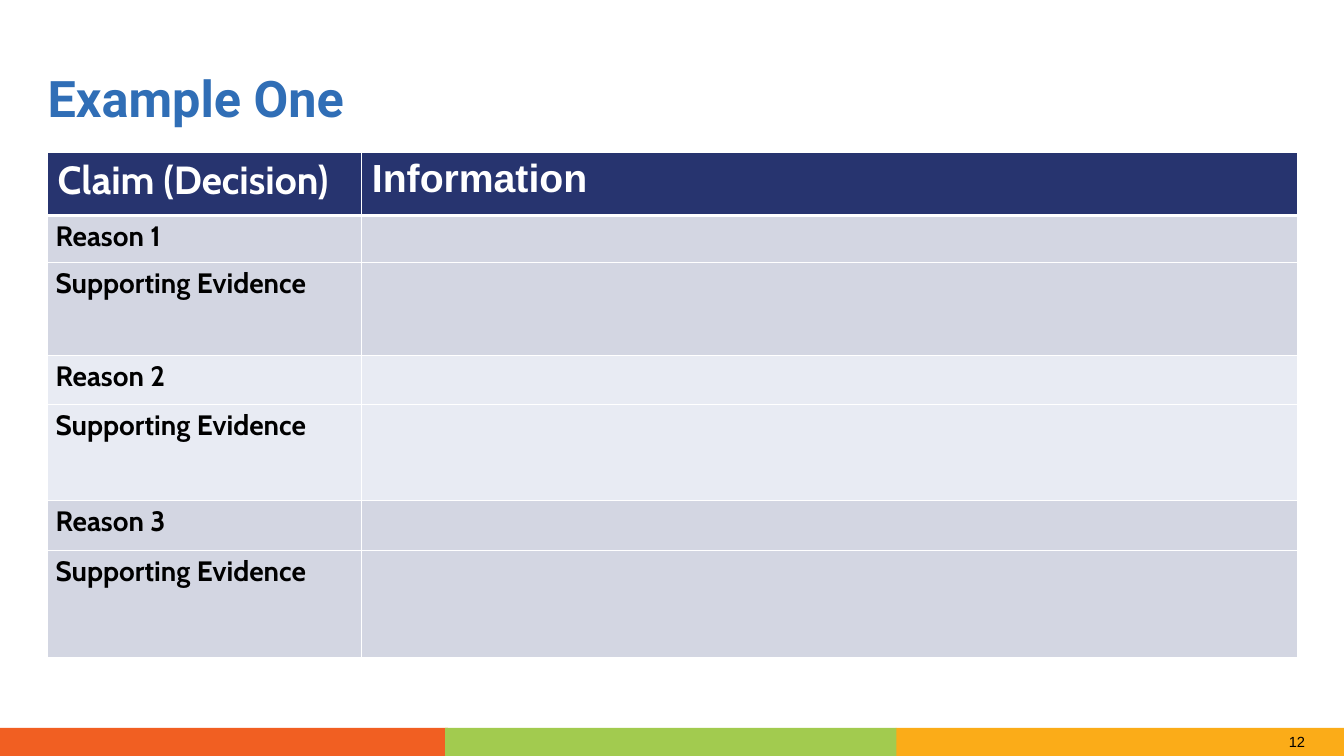
from lxml.etree import SubElement
from pptx import Presentation
from pptx.dml.color import RGBColor
from pptx.enum.shapes import MSO_SHAPE
from pptx.enum.text import MSO_ANCHOR, PP_ALIGN
from pptx.oxml import parse_xml
from pptx.oxml.ns import nsdecls, qn
from pptx.util import Cm, Pt

COLORS = {
    "title": "306EB6",
    "navy": "27346F",
    "pale": "E8EBF3",
    "white": "FFFFFF",
    "black": "000000",
    "orange": "F15F22",
    "green": "A2CB4F",
    "amber": "FBAC18",
}
SLIDE_WIDTH, SLIDE_HEIGHT = 33.87, 19.05
COLUMN_WIDTHS = [7.92, 23.58]
HEADINGS = [("Claim (Decision)", "Cabin"), ("Information", "Arial")]
HEADER_HEIGHT = 1.6
REASON_HEIGHTS = [(1.19, 2.34), (1.24, 2.41), (1.27, 2.69)]


def color(name):
    return RGBColor.from_string(COLORS[name])


def add_text(paragraph, text, font, size, color_name, bold=True):
    run = paragraph.add_run()
    run.text = text
    run.font.name = font
    run.font.size = Pt(size)
    run.font.bold = bold
    run.font.color.rgb = color(color_name)


def fill_solid(part, color_name):
    part.fill.solid()
    part.fill.fore_color.rgb = color(color_name)


def set_margins(part, horizontal, vertical):
    part.margin_left = part.margin_right = Cm(horizontal)
    part.margin_top = part.margin_bottom = Cm(vertical)


def style_cell(cell, fill_name, opacity=100, top=1, bottom=1):
    fill_solid(cell, fill_name)
    properties = cell._tc.get_or_add_tcPr()
    if opacity < 100:
        shade = properties.find(f"{qn('a:solidFill')}/{qn('a:srgbClr')}")
        SubElement(shade, qn("a:alpha"), val=str(opacity * 1000))
    edges = [("L", 1), ("R", 1), ("T", top), ("B", bottom)]
    for position, (edge, points) in enumerate(edges):
        border = parse_xml(
            f'<a:ln{edge} {nsdecls("a")} w="{Pt(points)}"><a:solidFill>'
            f'<a:srgbClr val="{COLORS["white"]}"/></a:solidFill></a:ln{edge}>'
        )
        properties.insert(position, border)


def place_title(slide, left, top, width, height):
    title = slide.shapes.title
    title.left, title.top = Cm(left), Cm(top)
    title.width, title.height = Cm(width), Cm(height)
    frame = title.text_frame
    set_margins(frame, 0, 0)
    frame.vertical_anchor = MSO_ANCHOR.MIDDLE
    heading = frame.paragraphs[0]
    heading.alignment = PP_ALIGN.LEFT
    heading.line_spacing = 0.9
    add_text(heading, "Example One", "Roboto", 36, "title")


def add_claim_table(slide, left, top):
    heights = [HEADER_HEIGHT] + [h for pair in REASON_HEIGHTS for h in pair]
    claims = slide.shapes.add_table(
        len(heights), len(COLUMN_WIDTHS), Cm(left), Cm(top),
        Cm(sum(COLUMN_WIDTHS)), Cm(sum(heights)),
    ).table
    claims.horz_banding = False
    for column, width in zip(claims.columns, COLUMN_WIDTHS):
        column.width = Cm(width)
    for row, height in zip(claims.rows, heights):
        row.height = Cm(height)

    for column, (heading, font) in enumerate(HEADINGS):
        cell = claims.cell(0, column)
        style_cell(cell, "navy", bottom=3)
        add_text(cell.text_frame.paragraphs[0], heading, font, 28, "white")

    for reason in range(len(REASON_HEIGHTS)):
        fill_name, opacity = ("pale", 100) if reason % 2 else ("navy", 20)
        labels = [f"Reason {reason + 1}", "Supporting Evidence"]
        for row, label in enumerate(labels, start=1 + 2 * reason):
            for column in range(len(COLUMN_WIDTHS)):
                cell = claims.cell(row, column)
                style_cell(cell, fill_name, opacity, top=3 if row == 1 else 1)
                set_margins(cell, 0.2, 0.1)
            label_cell = claims.cell(row, 0)
            add_text(label_cell.text_frame.paragraphs[0], label, "Cabin", 20, "black")


def add_footer(slide, left, top, width, height):
    bands = [
        ("amber", 22.58, 11.29),
        ("orange", 0, 11.29),
        ("green", 11.22, 11.37),
    ]
    for band_color, offset, band_width in bands:
        band = slide.shapes.add_shape(
            MSO_SHAPE.RECTANGLE, Cm(left + offset), Cm(top), Cm(band_width), Cm(height)
        )
        band.shadow.inherit = False
        fill_solid(band, band_color)
        band.line.fill.background()

    page_number = slide.shapes.add_textbox(
        Cm(left + width - 1.64), Cm(top), Cm(0.97), Cm(height)
    )
    frame = page_number.text_frame
    frame.word_wrap = False
    add_text(frame.paragraphs[0], "12", "Arial", 10.5, "black", bold=False)


def main():
    deck = Presentation()
    deck.slide_width, deck.slide_height = Cm(SLIDE_WIDTH), Cm(SLIDE_HEIGHT)
    slide = deck.slides.add_slide(deck.slide_layouts[5])
    fill_solid(slide.background, "white")
    add_footer(slide, 0, 18.34, SLIDE_WIDTH, 0.71)
    place_title(slide, 1.2, 1.96, sum(COLUMN_WIDTHS), 1.2)
    add_claim_table(slide, 1.2, 3.83)
    deck.save("out.pptx")


if __name__ == "__main__":
    main()
